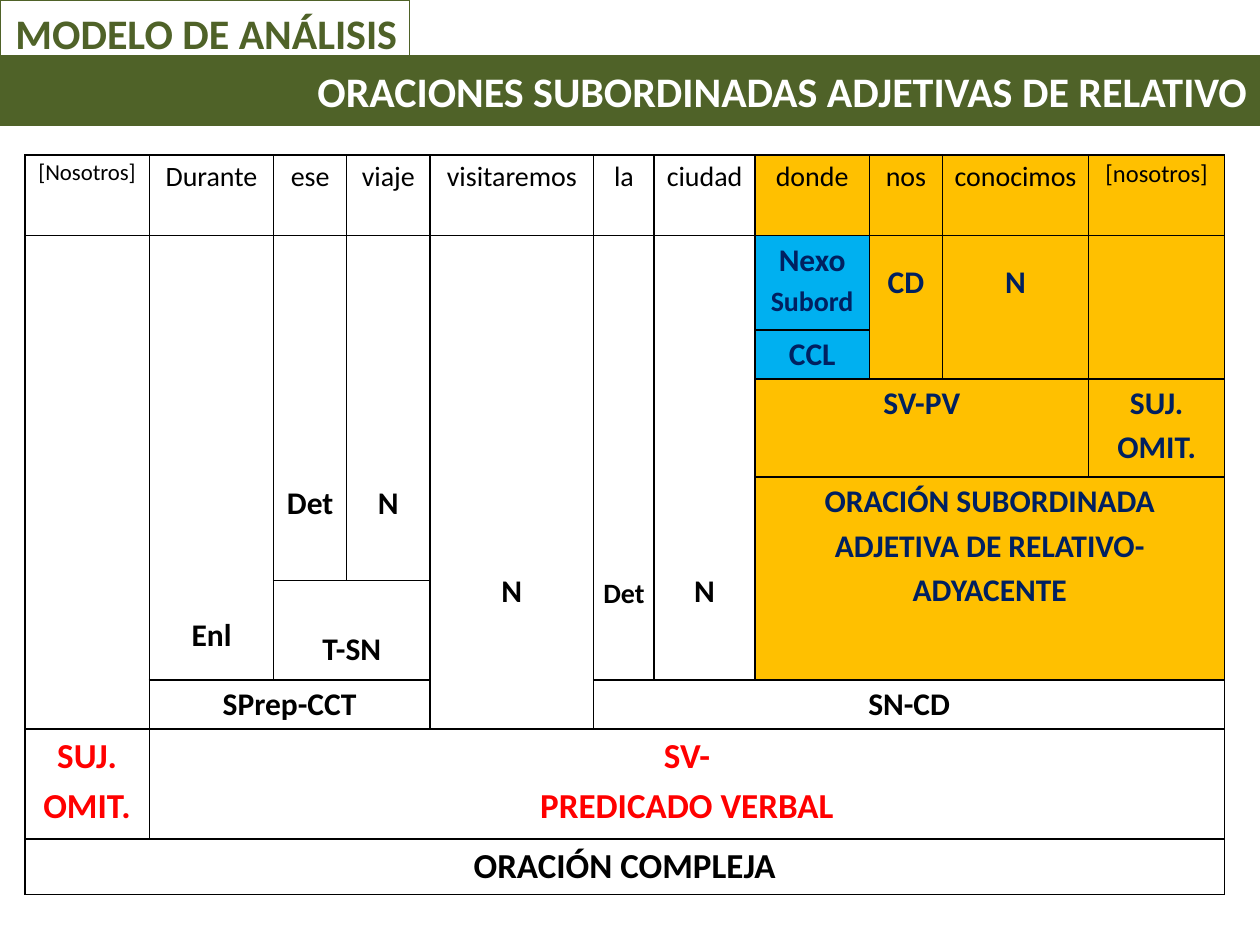
from lxml import etree
from pptx import Presentation
from pptx.dml.color import RGBColor
from pptx.enum.shapes import MSO_SHAPE
from pptx.enum.text import MSO_ANCHOR, MSO_AUTO_SIZE, PP_ALIGN
from pptx.oxml.ns import qn
from pptx.util import Cm, Pt

RECTANGLE = MSO_SHAPE.RECTANGLE
TOP, MIDDLE = MSO_ANCHOR.TOP, MSO_ANCHOR.MIDDLE
CENTER, RIGHT = PP_ALIGN.CENTER, PP_ALIGN.RIGHT

GREEN = RGBColor(0x4F, 0x62, 0x28)
WHITE = RGBColor(0xFF, 0xFF, 0xFF)
BLACK = RGBColor(0, 0, 0)
RED = RGBColor(0xFF, 0, 0)
NAVY = RGBColor(0x00, 0x20, 0x60)
ORANGE = RGBColor(0xFF, 0xC0, 0x00)
BLUE = RGBColor(0x00, 0xB0, 0xF0)

# Content
HEADING = "ORACIONES SUBORDINADAS ADJETIVAS DE RELATIVO"
SECTION = "MODELO DE ANÁLISIS"
WORDS = ["[Nosotros]", "Durante", "ese", "viaje", "visitaremos", "la",
         "ciudad", "donde", "nos", "conocimos", "[nosotros]"]
WORD_SIZES = {"[Nosotros]": 13, "[nosotros]": 14}
FIRST_SUBORDINATE = WORDS.index("donde")

MAIN = dict(color=BLACK)
SUBORDINATE = dict(color=NAVY, fill=ORANGE)
LINK = dict(color=NAVY, fill=BLUE)
PREDICATE = dict(color=RED, size=20)

# Row, column, rows spanned, columns spanned, text, top margin in cm, format
ANALYSIS = [
    (1, 0, 6, 1, "", 0, MAIN),
    (1, 1, 5, 1, "Enl", 7.57, MAIN),
    (1, 2, 4, 1, "Det", 4.9, MAIN),
    (1, 3, 4, 1, "N", 4.9, MAIN),
    (1, 4, 6, 1, "N", 6.68, MAIN),
    (1, 5, 5, 1, "Det", 6.78, dict(color=BLACK, size=16)),
    (1, 6, 5, 1, "N", 6.68, MAIN),
    (1, 7, 1, 1, "Nexo\nSubord", 0, dict(LINK, last_size=16)),
    (1, 8, 2, 1, "CD", 0.45, SUBORDINATE),
    (1, 9, 2, 1, "N", 0.45, SUBORDINATE),
    (1, 10, 2, 1, "", 0, SUBORDINATE),
    (2, 7, 1, 1, "CCL", 0, LINK),
    (3, 7, 1, 3, "SV-PV", 0, SUBORDINATE),
    (3, 10, 1, 1, "SUJ.\nOMIT.", 0, SUBORDINATE),
    (4, 7, 2, 4, "ORACIÓN SUBORDINADA ADJETIVA DE RELATIVO-\nADYACENTE", 0, SUBORDINATE),
    (5, 2, 1, 2, "T-SN", 0.89, MAIN),
    (6, 1, 1, 3, "SPrep-CCT", 0, MAIN),
    (6, 5, 1, 6, "SN-CD", 0, MAIN),
    (7, 0, 1, 1, "SUJ.\nOMIT.", 0, PREDICATE),
    (7, 1, 1, 10, "SV-\nPREDICADO VERBAL", 0, PREDICATE),
    (8, 0, 1, 11, "ORACIÓN COMPLEJA", 0, dict(color=BLACK, size=20)),
]
COLUMN_WIDTHS = [2.51, 2.51, 1.47, 1.68, 3.3, 1.22, 2.03, 2.31, 1.47, 2.95, 2.74]
ROW_HEIGHTS = [1.63, 1.9, 0.99, 1.98, 2.08, 2.01, 0.99, 2.21, 1.12]


def write(frame, text, size=18, last_size=None, color=BLACK, bold=True,
          align=CENTER, spacing=1.15):
    lines = text.split("\n")
    for number, line in enumerate(lines):
        paragraph = frame.add_paragraph() if number else frame.paragraphs[0]
        paragraph.alignment = align
        paragraph.line_spacing = spacing
        if not line:
            continue
        run = paragraph.add_run()
        run.text = line
        last = number == len(lines) - 1
        run.font.size = Pt(last_size if last and last_size else size)
        run.font.name = "Calibri"
        run.font.bold = bold
        run.font.color.rgb = color


def place_banner(banner, left, top, width, height, text, fill, color):
    banner.left, banner.top = Cm(left), Cm(top)
    banner.width, banner.height = Cm(width), Cm(height)
    banner.fill.solid()
    banner.fill.fore_color.rgb = fill
    banner.line.color.rgb = GREEN
    banner.line.width = Pt(0.75)
    frame = banner.text_frame
    frame.word_wrap = True
    frame.auto_size = MSO_AUTO_SIZE.NONE
    frame.vertical_anchor = MIDDLE
    write(frame, text, size=24, color=color, align=RIGHT, spacing=1.0)


def style_cell(cell, fill=None):
    cell.margin_left = cell.margin_right = Cm(0.15)
    cell.margin_top = cell.margin_bottom = 0
    cell.vertical_anchor = TOP
    properties = cell._tc.get_or_add_tcPr()
    for side in ("a:lnL", "a:lnR", "a:lnT", "a:lnB"):
        border = etree.SubElement(properties, qn(side), w=str(Pt(1)))
        solid = etree.SubElement(border, qn("a:solidFill"))
        etree.SubElement(solid, qn("a:srgbClr"), val=str(BLACK))
    if fill is None:
        cell.fill.background()
    else:
        cell.fill.solid()
        cell.fill.fore_color.rgb = fill


def fill_block(table, row, column, rows, columns, text, top, fill=None, **form):
    for r in range(row, row + rows):
        for c in range(column, column + columns):
            style_cell(table.cell(r, c), fill)
    origin = table.cell(row, column)
    if rows * columns > 1:
        origin.merge(table.cell(row + rows - 1, column + columns - 1))
    origin.margin_top = Cm(top)
    write(origin.text_frame, text, **form)


def main():
    deck = Presentation()
    deck.slide_width, deck.slide_height = Cm(25.4), Cm(19.05)
    slide = deck.slides.add_slide(deck.slide_layouts[5])
    shapes = slide.shapes

    # Analysis table
    table = shapes.add_table(len(ROW_HEIGHTS), len(COLUMN_WIDTHS), Cm(0.5), Cm(3.12),
                             Cm(sum(COLUMN_WIDTHS)), Cm(sum(ROW_HEIGHTS))).table
    table.first_row = table.horz_banding = False
    for column, width in zip(table.columns, COLUMN_WIDTHS):
        column.width = Cm(width)
    for row, height in zip(table.rows, ROW_HEIGHTS):
        row.height = Cm(height)
    for column, word in enumerate(WORDS):
        fill_block(table, 0, column, 1, 1, word, 0, bold=False,
                   fill=ORANGE if column >= FIRST_SUBORDINATE else None,
                   size=WORD_SIZES.get(word, 16))
    for *block, form in ANALYSIS:
        fill_block(table, *block, **form)

    # Section label, partly covered by the title banner
    section = shapes.add_shape(RECTANGLE, 0, 0, 0, 0)
    section.shadow.inherit = False
    place_banner(section, 0, 0, 8.26, 1.32, SECTION, WHITE, GREEN)
    title = shapes.title
    place_banner(title, 0, 1.12, 25.4, 1.4, HEADING, GREEN, WHITE)
    section._element.addnext(title._element)

    deck.save("out.pptx")


if __name__ == "__main__":
    main()
